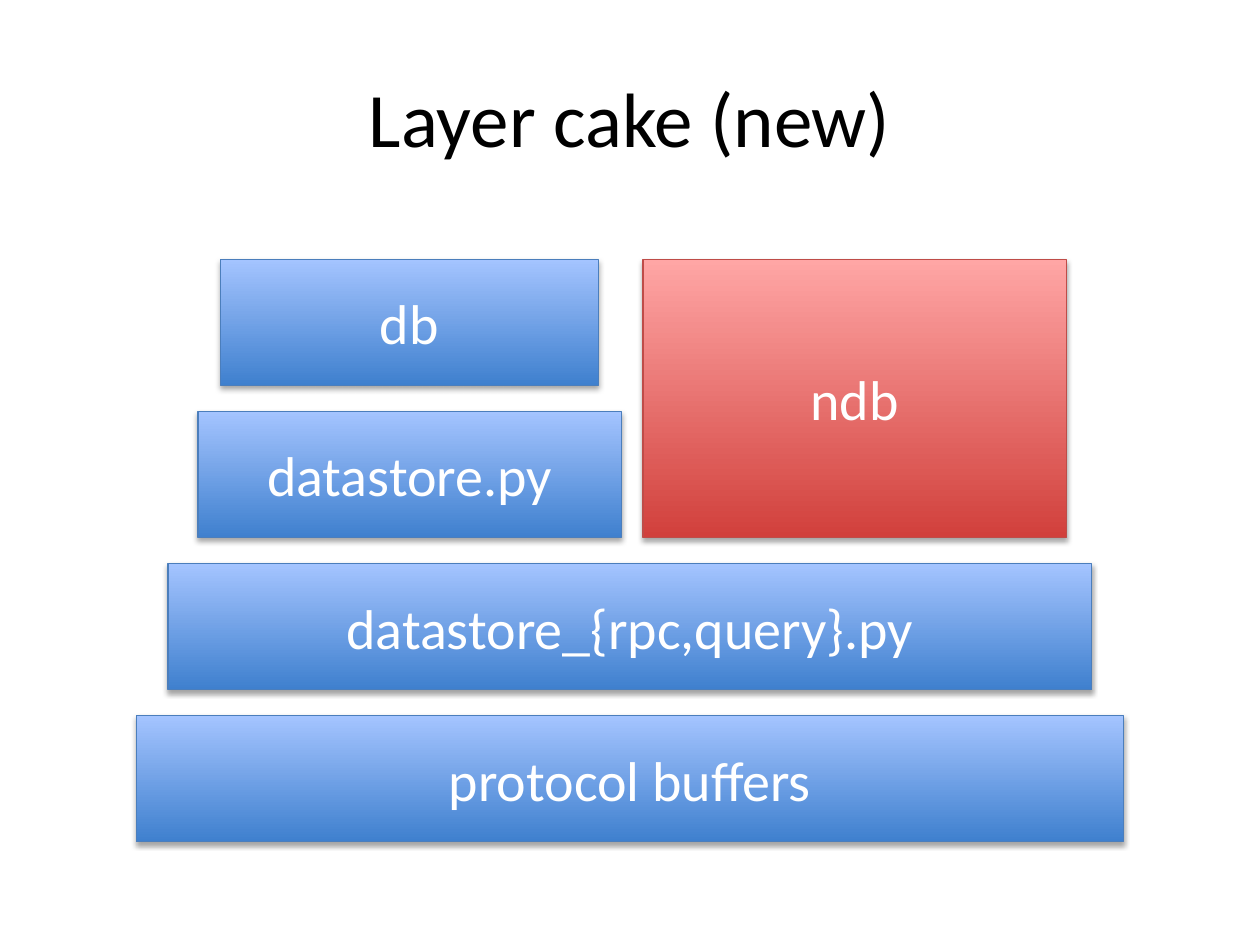
import pptx
import pptx.util
import pptx.dml.color
import pptx.enum.shapes
import pptx.enum.text
import pptx.oxml
import pptx.oxml.ns

Cm, Pt = pptx.util.Cm, pptx.util.Pt
RGB = pptx.dml.color.RGBColor

BLACK = RGB(0x00, 0x00, 0x00)
WHITE = RGB(0xFF, 0xFF, 0xFF)
# Each tone: bottom colour, top colour, outline
BLUE = (RGB(0x3F, 0x80, 0xCE), RGB(0xA4, 0xC4, 0xFF), RGB(0x4B, 0x7E, 0xBC))
RED = (RGB(0xD1, 0x40, 0x3C), RGB(0xFF, 0xA6, 0xA5), RGB(0xBF, 0x4C, 0x48))

SHADE = (
    f'<a:outerShdw {pptx.oxml.ns.nsdecls("a")} blurRad="40000" dist="23000" '
    'dir="5400000" rotWithShape="0"><a:srgbClr val="000000">'
    '<a:alpha val="35000"/></a:srgbClr></a:outerShdw>'
)


def write(shape, text, size, color):
    """Put one centred line of text into a shape."""
    frame = shape.text_frame
    frame.word_wrap = True
    frame.vertical_anchor = pptx.enum.text.MSO_ANCHOR.MIDDLE
    line = frame.paragraphs[0]
    line.text = text
    line.alignment = pptx.enum.text.PP_ALIGN.CENTER
    line.font.name = "Calibri"
    line.font.size = Pt(size)
    line.font.color.rgb = color


def add_title(slide, left, top, width, height):
    box = slide.shapes.add_textbox(Cm(left), Cm(top), Cm(width), Cm(height))
    write(box, "Layer cake (new)", 44, BLACK)


def add_layer(slide, text, tone, left, top, width, height):
    """Draw one block with a vertical gradient and a soft shadow."""
    block = slide.shapes.add_shape(
        pptx.enum.shapes.MSO_SHAPE.RECTANGLE,
        Cm(left), Cm(top), Cm(width), Cm(height))
    low, high, edge = tone
    block.fill.gradient()
    block.fill.gradient_angle = 90
    for stop, color in zip(block.fill.gradient_stops, (low, high)):
        stop.color.rgb = color
    block.line.color.rgb = edge
    block.line.width = Pt(0.75)
    block.shadow.inherit = False
    effects = block._element.spPr.find(pptx.oxml.ns.qn("a:effectLst"))
    effects.append(pptx.oxml.parse_xml(SHADE))
    write(block, text, 32, WHITE)


def add_cake(slide, left, top, width, height):
    """Stack four rows of layers, with ndb spanning the upper two."""
    thick = 2.54
    pitch = (height - thick) / 3
    mid = width / 2
    # Text, tone, first row, rows spanned, centre, width
    layers = [
        ("db", BLUE, 0, 1, 5.5, 7.62),
        ("datastore.py", BLUE, 1, 1, 5.51, 8.53),
        ("datastore_{rpc,query}.py", BLUE, 2, 1, mid, 18.62),
        ("protocol buffers", BLUE, 3, 1, mid, width),
        ("ndb", RED, 0, 2, 14.48, 8.53),
    ]
    for text, tone, row, span, center, wide in layers:
        add_layer(slide, text, tone, left + center - wide / 2,
                  top + row * pitch, wide, thick + (span - 1) * pitch)


def main():
    deck = pptx.Presentation()
    deck.slide_width, deck.slide_height = Cm(25.4), Cm(19.05)
    slide = deck.slides.add_slide(deck.slide_layouts[6])
    add_title(slide, 1.27, 0.76, 22.86, 3.18)
    add_cake(slide, 2.75, 5.23, 19.9, 11.74)
    deck.save("out.pptx")


if __name__ == "__main__":
    main()
